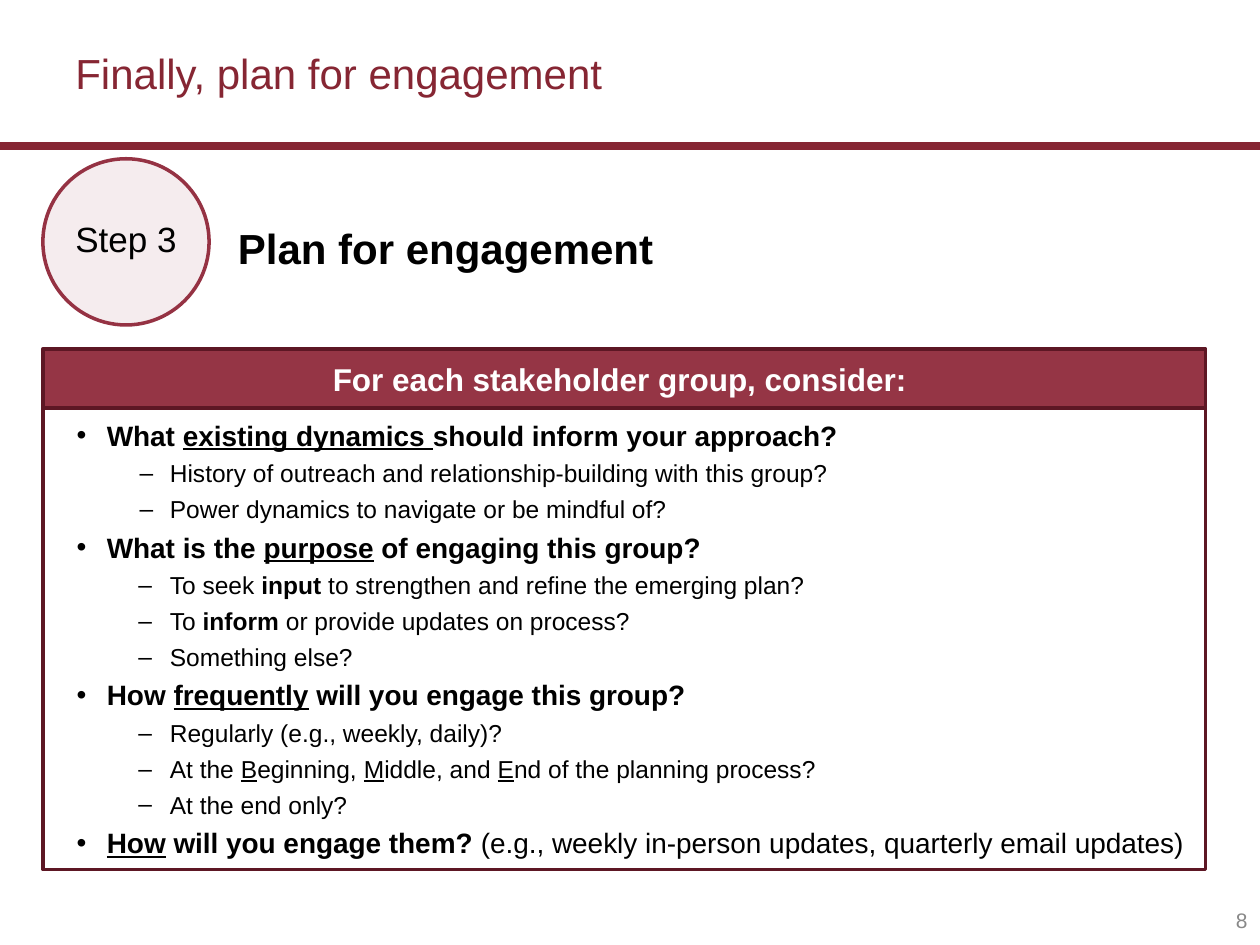
from lxml import etree
from pptx import Presentation
from pptx.dml.color import RGBColor
from pptx.enum import shapes, text
from pptx.oxml.ns import qn
from pptx.util import Pt

COLORS = {
    "title": "862633", "header": "953545", "border": "5D1724",
    "ring": "953243", "disc": "F5EBED", "ink": "000000",
    "paper": "FFFFFF", "number": "888888",
}
FONT = "Arial"
LEFT, CENTER, RIGHT = text.PP_ALIGN.LEFT, text.PP_ALIGN.CENTER, text.PP_ALIGN.RIGHT

# Each question is (runs, indent of its points, points); a run is (words, style),
# where style may hold "b" for bold and "u" for underlined.
QUESTIONS = [
    ([("What ", "b"), ("existing dynamics ", "bu"), ("should inform your approach?", "b")], 17.3, [
        [("History of outreach and relationship-building with this group?", "")],
        [("Power dynamics to navigate or be mindful of?", "")],
    ]),
    ([("What is the ", "b"), ("purpose", "bu"), (" of engaging this group?", "b")], 18, [
        [("To seek ", ""), ("input", "b"), (" to strengthen and refine the emerging plan?", "")],
        [("To ", ""), ("inform", "b"), (" or provide updates on process?", "")],
        [("Something else?", "")],
    ]),
    ([("How ", "b"), ("frequently", "bu"), (" will you engage this group?", "b")], 18, [
        [("Regularly (e.g., weekly, daily)?", "")],
        [("At the ", ""), ("B", "u"), ("eginning, ", ""), ("M", "u"), ("iddle, and ", ""),
         ("E", "u"), ("nd of the planning process?", "")],
        [("At the end only?", "")],
    ]),
    ([("How", "bu"), (" will you engage them?", "b"),
      (" (e.g., weekly in-person updates, quarterly email updates)", "")], 18, []),
]


def rgb(name):
    return RGBColor.from_string(COLORS[name])


def style_font(font, size, color, bold=False, underline=False):
    font.name, font.size, font.bold = FONT, Pt(size), bold
    font.underline = underline
    font.color.rgb = rgb(color)


def write(shape, words, size, color, bold=False, align=LEFT, inset=(7.2, 3.6)):
    """Put one vertically centred line of text in a shape."""
    frame = shape.text_frame
    frame.word_wrap = True
    frame.vertical_anchor = text.MSO_ANCHOR.MIDDLE
    frame.margin_left = frame.margin_right = Pt(inset[0])
    frame.margin_top = frame.margin_bottom = Pt(inset[1])
    frame.text = words
    line = frame.paragraphs[0]
    line.alignment = align
    style_font(line.runs[0].font, size, color, bold)
    return line


def add_label(parent, box, *args, **kwargs):
    label = parent.shapes.add_textbox(*map(Pt, box))
    return write(label, *args, **kwargs)


def add_outline(parent, preset, box, fill, line):
    shape = parent.shapes.add_shape(preset, *map(Pt, box))
    shape.shadow.inherit = False
    if fill:
        shape.fill.solid()
        shape.fill.fore_color.rgb = rgb(fill)
    else:
        shape.fill.background()
    shape.line.color.rgb = rgb(line)
    shape.line.width = Pt(2)
    return shape


def add_title_band(slide, box):
    left, top, width, height = box
    bottom = Pt(top + height)
    rule = slide.shapes.add_connector(
        shapes.MSO_CONNECTOR.STRAIGHT, Pt(left), bottom, Pt(left + width), bottom)
    rule.line.color.rgb = rgb("title")
    rule.line.width = Pt(5)
    etree.SubElement(rule._element.spPr, qn("a:effectLst"))
    add_label(slide, (left + 36, top, width - 72, height),
              "Finally, plan for engagement", 24, "title")


def add_step(slide, box):
    """Step badge at the left of the box, with its heading beside it."""
    left, top, width, size = box
    badge = slide.shapes.add_group_shape()
    disc = add_outline(badge, shapes.MSO_SHAPE.OVAL, (left, top, size, size), "disc", "ring")
    tint = disc._element.spPr.find(qn("a:solidFill"))[0]
    etree.SubElement(tint, qn("a:alpha"), val="90000")
    inner = 68
    gap = (size - inner) / 2
    step = add_label(badge, (left + gap, top + gap - 0.5, inner, inner), "Step 3", 20, "ink",
                     align=CENTER, inset=(2, 2))
    step.line_spacing = 0.9
    add_label(slide, (left + size + 9.4, top + 40.3, width - size - 9.4, 21.6),
              "Plan for engagement", 24, "ink", bold=True, inset=(7.2, 7.2))


def format_bullet(line, mark, margin, hang):
    props = line._p.get_or_add_pPr()
    props.set("marL", str(Pt(margin)))
    props.set("indent", str(-Pt(hang)))
    color = etree.SubElement(props, qn("a:buClr"))
    etree.SubElement(color, qn("a:srgbClr"), val=COLORS["ink"])
    etree.SubElement(props, qn("a:buFont"), typeface=FONT)
    etree.SubElement(props, qn("a:buChar"), char=mark)


def add_questions(slide, box):
    frame = slide.shapes.add_textbox(*map(Pt, box)).text_frame
    frame.word_wrap = True
    items = []
    for question, hang, points in QUESTIONS:
        items.append((question, 0, 16, "•", 54, 17.3))
        items += [(point, 1, 14, "–", 90, hang) for point in points]
    for index, (runs, level, size, mark, margin, hang) in enumerate(items):
        line = frame.add_paragraph() if index else frame.paragraphs[0]
        line.level = level
        if index:
            line.space_before = Pt(3.7)
        format_bullet(line, mark, margin, hang)
        for words, style in runs:
            run = line.add_run()
            run.text = words
            style_font(run.font, size, "ink", "b" in style, "u" in style)


def add_panel(slide, box):
    left, top, width, height = box
    head = 33.8
    add_questions(slide, (0, top + head + 2.2, left + width, height - head))
    header = add_outline(slide, shapes.MSO_SHAPE.RECTANGLE, (left, top, width, head),
                         "header", "border")
    write(header, "For each stakeholder group, consider: ", 18, "paper", bold=True, align=CENTER)
    add_outline(slide, shapes.MSO_SHAPE.RECTANGLE,
                (left, top + head, width, height - head), None, "border")


def main():
    deck = Presentation()
    deck.slide_width, deck.slide_height = Pt(720), Pt(540)
    slide = deck.slides.add_slide(deck.slide_layouts[6])
    add_title_band(slide, (0, 0, 720, 83.5))
    add_label(slide, (552, 511.2, 168, 28.8), "8", 12, "number", align=RIGHT)
    add_panel(slide, (24.5, 199.4, 664.5, 297.4))
    add_step(slide, (24.5, 90.7, 680, 95))
    deck.save("out.pptx")


if __name__ == "__main__":
    main()
